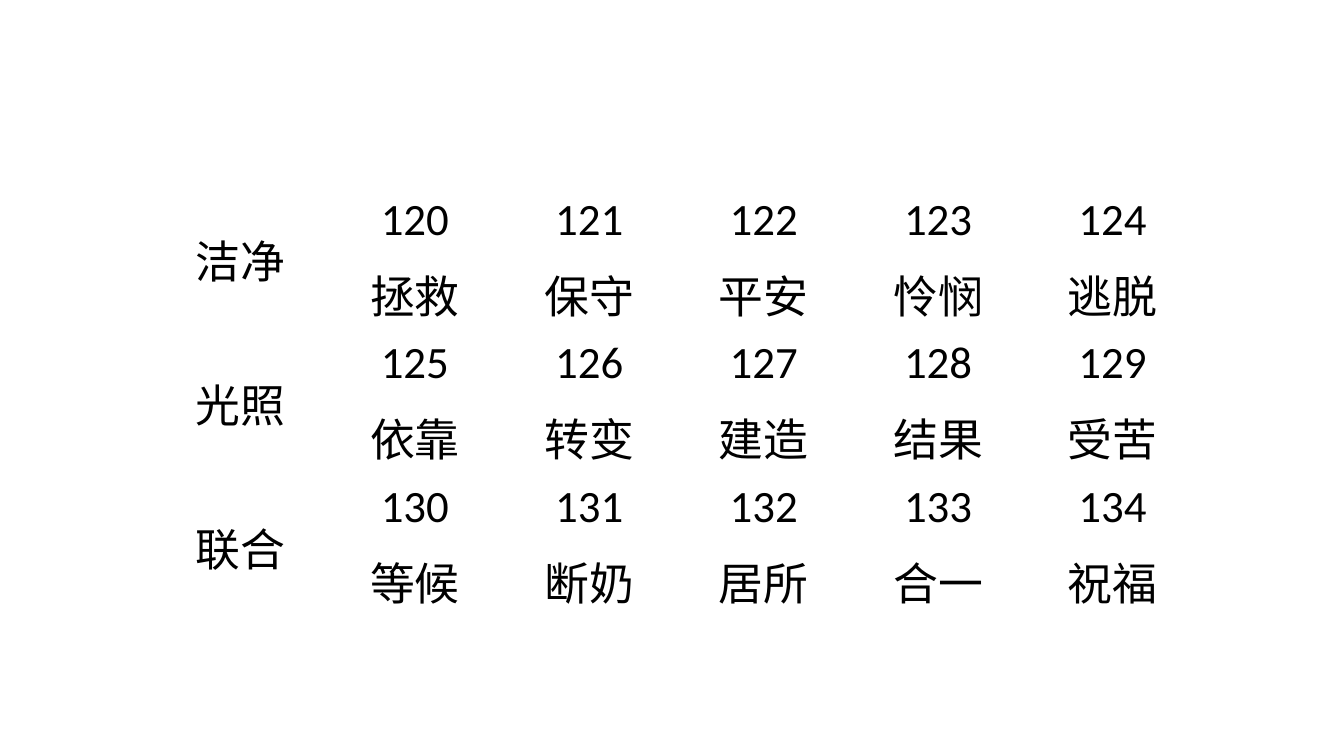
from dataclasses import dataclass

from pptx import Presentation
from pptx.dml.color import RGBColor
from pptx.enum.text import MSO_ANCHOR, PP_ALIGN
from pptx.util import Inches, Pt

CENTER = PP_ALIGN.CENTER
TOP, MIDDLE = MSO_ANCHOR.TOP, MSO_ANCHOR.MIDDLE
BLANK_LAYOUT = 6

# Each theme word heads five numbered topics
FIRST_NUMBER = 120
THEMES = {
    "洁净": ["拯救", "保守", "平安", "怜悯", "逃脱"],
    "光照": ["依靠", "转变", "建造", "结果", "受苦"],
    "联合": ["等候", "断奶", "居所", "合一", "祝福"],
}
TOPICS_PER_THEME = 5


@dataclass(frozen=True)
class Theme:
    font: str = "Calibri"
    text_size: int = 32
    text_color: RGBColor = RGBColor(0, 0, 0)


class SlideBuilder:
    def __init__(self, slide, theme):
        self.slide = slide
        self.theme = theme

    def table(self, left, top, column_width, row_height, columns, rows):
        """Add an unstyled grid of equal cells."""
        grid = self.slide.shapes.add_table(
            rows, columns, Inches(left), Inches(top),
            Inches(column_width * columns), Inches(row_height * rows)).table
        options = {"first_row": False, "horz_banding": False}
        for option, value in options.items():
            setattr(grid, option, value)
        for column in grid.columns:
            column.width = Inches(column_width)
        for row in grid.rows:
            row.height = Inches(row_height)
        for cell in grid.iter_cells():
            cell.fill.background()
        return grid

    def cell_text(self, cell, text, anchor=TOP):
        """Write centred text in the theme's style."""
        cell.vertical_anchor = anchor
        paragraph = cell.text_frame.paragraphs[0]
        paragraph.alignment = CENTER
        run = paragraph.add_run()
        run.text = text
        formats = {"name": self.theme.font, "size": Pt(self.theme.text_size)}
        for attribute, value in formats.items():
            setattr(run.font, attribute, value)
        run.font.color.rgb = self.theme.text_color


def main():
    deck = Presentation()
    deck.slide_width, deck.slide_height = Inches(13.33), Inches(7.5)
    slide = deck.slides.add_slide(deck.slide_layouts[BLANK_LAYOUT])
    builder = SlideBuilder(slide, Theme())

    # Grid: a number row and a topic row for each theme word
    overview = builder.table(1.52, 1.86, 1.73, 0.68,
                             TOPICS_PER_THEME + 1, 2 * len(THEMES))

    for index, (theme_word, topics) in enumerate(THEMES.items()):
        number_row, topic_row = 2 * index, 2 * index + 1

        # Theme word across both rows
        theme_cell = overview.cell(number_row, 0)
        theme_cell.merge(overview.cell(topic_row, 0))
        builder.cell_text(theme_cell, theme_word, MIDDLE)

        # Numbers above their topics
        first = FIRST_NUMBER + index * TOPICS_PER_THEME
        for column, topic in enumerate(topics, start=1):
            number = str(first + column - 1)
            builder.cell_text(overview.cell(number_row, column), number)
            builder.cell_text(overview.cell(topic_row, column), topic)

    deck.save("out.pptx")


if __name__ == "__main__":
    main()
